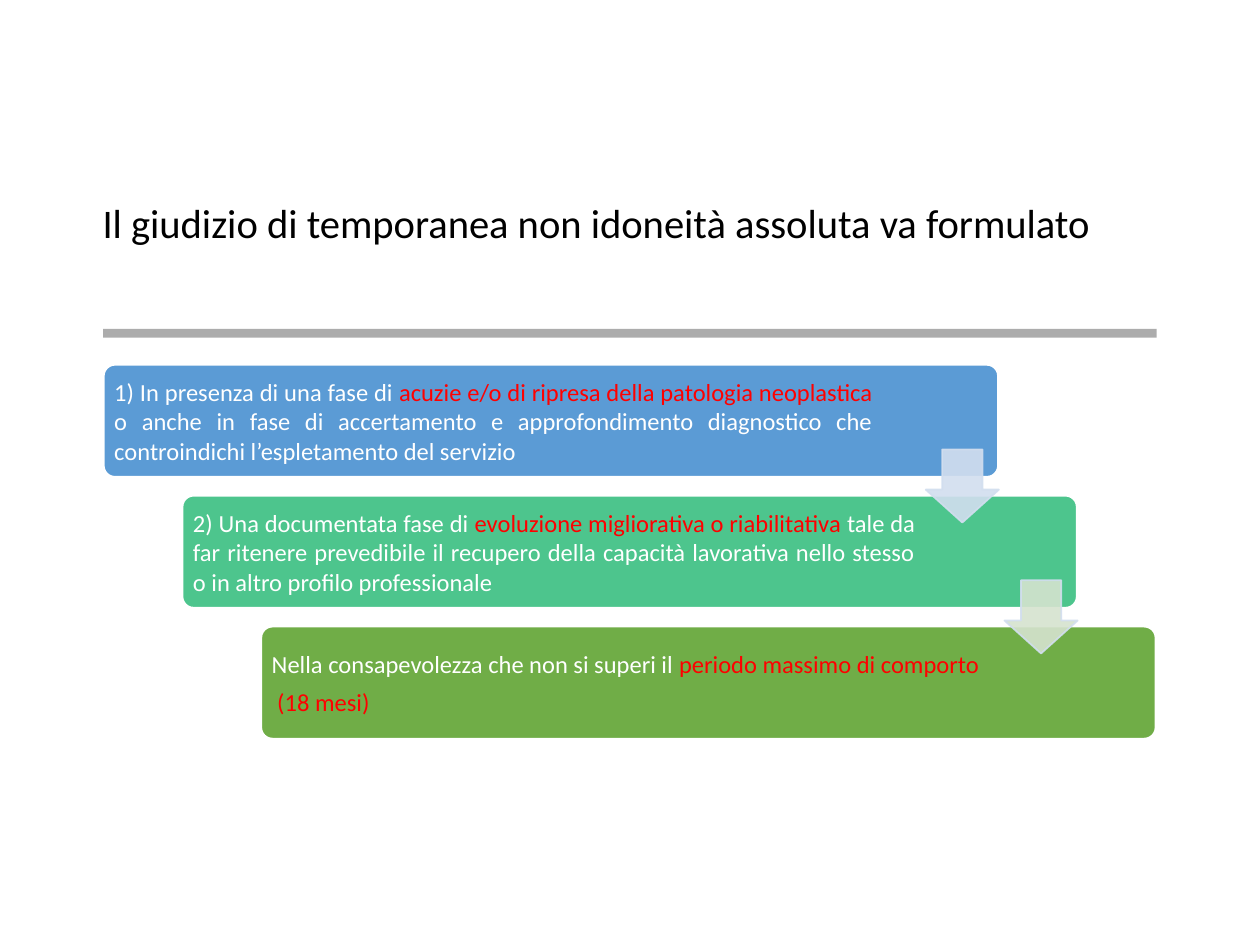
import pptx
import pptx.util
import pptx.dml.color
import pptx.enum.shapes
import pptx.enum.text
import lxml.etree

Pt = pptx.util.Pt
SHAPES = pptx.enum.shapes.MSO_SHAPE
ANCHOR = pptx.enum.text.MSO_ANCHOR
ALIGN = pptx.enum.text.PP_ALIGN


def set_color(color_format, value, opacity=100):
    color_format.rgb = pptx.dml.color.RGBColor.from_string(value)
    if opacity < 100:
        color = color_format._xFill.find(".//" + pptx.oxml.ns.qn("a:srgbClr"))
        alpha = lxml.etree.SubElement(color, pptx.oxml.ns.qn("a:alpha"))
        alpha.set("val", str(opacity * 1000))


def add_block(kind, left, top, width, height, fill, line=None, opacity=100):
    shape = slide.shapes.add_shape(kind, Pt(left), Pt(top), Pt(width), Pt(height))
    shape.shadow.inherit = False
    shape.fill.solid()
    set_color(shape.fill.fore_color, fill, opacity)
    if line:
        shape.line.width = Pt(1)
        shape.line.fill.solid()
        set_color(shape.line.fill.fore_color, line, opacity)
    else:
        shape.line.fill.background()
    return shape


presentation = pptx.Presentation()
presentation.slide_width, presentation.slide_height = Pt(720), Pt(540)
slide = presentation.slides.add_slide(presentation.slide_layouts[5])

# Title, raised above the middle by its bottom inset
title = slide.shapes.title
title.left, title.top, title.width, title.height = Pt(51.4), Pt(103.7), Pt(617), Pt(78.5)
title.text_frame.text = "Il giudizio di temporanea non idoneità assoluta va formulato"
title.text_frame.auto_size = pptx.enum.text.MSO_AUTO_SIZE.NONE
title.text_frame.vertical_anchor = ANCHOR.MIDDLE
title.text_frame.margin_bottom = Pt(32)
paragraph = title.text_frame.paragraphs[0]
paragraph.alignment = ALIGN.LEFT
paragraph.line_spacing = 0.9
paragraph.font.name = "Calibri"
paragraph.font.size = Pt(23.2)
set_color(paragraph.font.color, "000000")

# Rule under the title
add_block(SHAPES.RECTANGLE, 59, 188, 602, 5, "808080", opacity=65)

# Staircase of steps: fill, text width, paragraphs of (text, colour) runs
WHITE, RED = "FFFFFF", "FF0000"
LEFT, TOP, STEP_X, STEP_Y = 59.3, 208.5, 45, 74.8
steps = [
    ("5B9BD5", 442, [[
        ("1) In presenza di una fase di ", WHITE),
        ("acuzie e/o di ripresa della patologia neoplastica ", RED),
        ("o anche in fase di accertamento e approfondimento diagnostico che "
         "controindichi l’espletamento del servizio", WHITE)]]),
    ("4DC58D", 421, [[
        ("2) Una documentata fase di ", WHITE),
        ("evoluzione migliorativa o riabilitativa", RED),
        (" tale da far ritenere prevedibile il recupero della capacità lavorativa "
         "nello stesso o in altro profilo professionale", WHITE)]]),
    ("70AD47", 421, [
        [("Nella consapevolezza che non si superi il ", WHITE),
         ("periodo massimo di comporto", RED)],
        [(" (18 mesi)", RED)]]),
]
for index, (fill, text_width, paragraphs) in enumerate(steps):
    left, top = LEFT + index * STEP_X, TOP + index * STEP_Y
    box = add_block(SHAPES.ROUNDED_RECTANGLE, left, top, 511, 64, fill, WHITE)
    box.adjustments[0] = 0.1

    text_box = slide.shapes.add_textbox(Pt(left + 1.8), Pt(top + 1.8), Pt(text_width), Pt(60.4))
    frame = text_box.text_frame
    frame.word_wrap = True
    frame.vertical_anchor = ANCHOR.MIDDLE
    frame.margin_left = frame.margin_right = Pt(4.2)
    frame.margin_top = frame.margin_bottom = Pt(4.2)
    for number, runs in enumerate(paragraphs):
        paragraph = frame.add_paragraph() if number else frame.paragraphs[0]
        paragraph.alignment = ALIGN.JUSTIFY
        paragraph.space_after = Pt(4.9)
        paragraph.font.name = "Calibri"
        paragraph.font.size = Pt(14)
        for text, color in runs:
            run = paragraph.add_run()
            run.text = text
            set_color(run.font.color, color)

# Arrows from each step to the next
for index, fill in enumerate(["D2DEEF", "D5E3CF"]):
    arrow = add_block(SHAPES.DOWN_ARROW, 529 + index * STEP_X, 256.8 + index * STEP_Y,
                      41.8, 41.8, fill, "D2DEEF", 90)
    arrow.adjustments[0] = 0.55
    arrow.adjustments[1] = 0.45

presentation.save("out.pptx")
